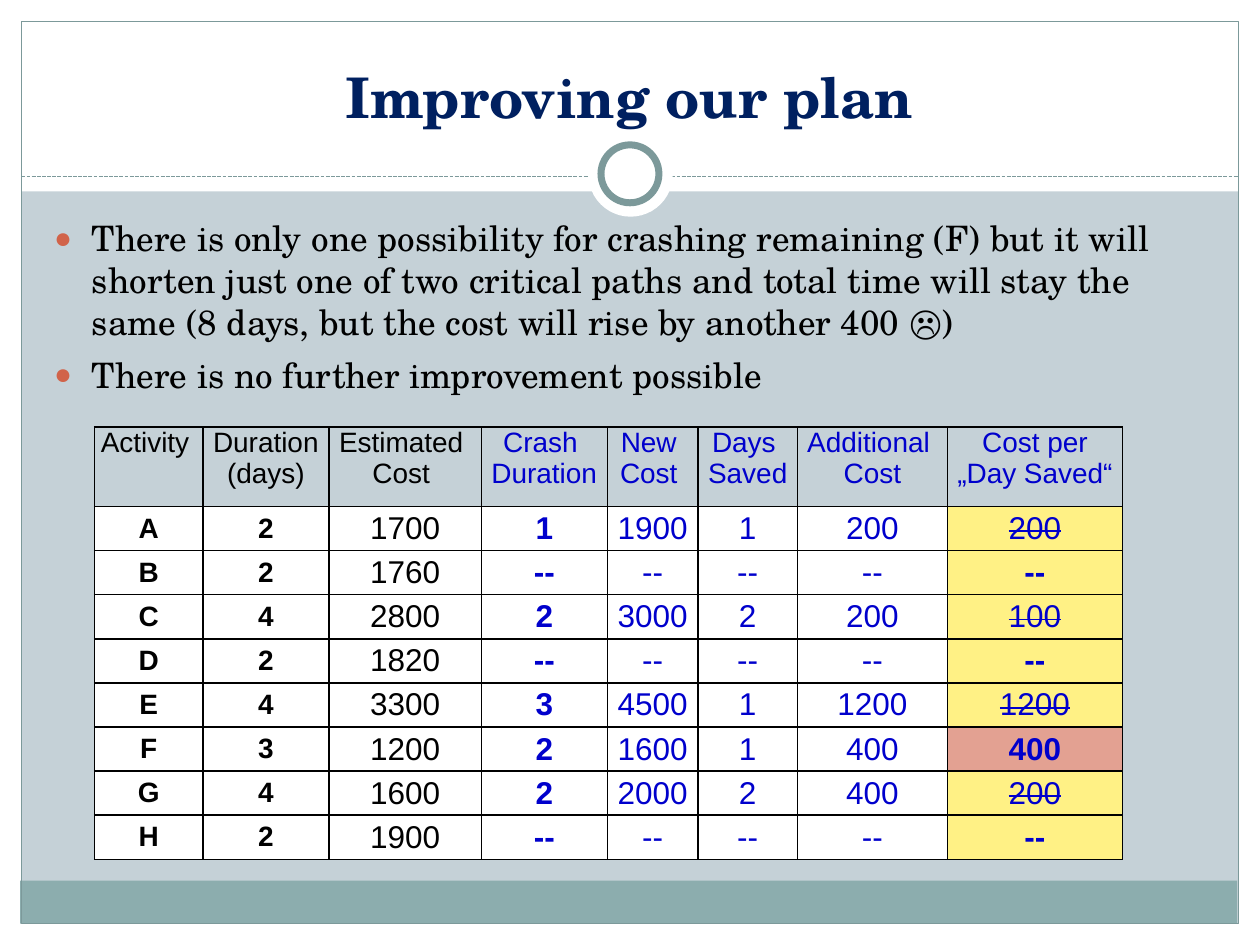
from typing import NamedTuple, Optional

from lxml import etree
from pptx import Presentation
from pptx.dml.color import RGBColor
from pptx.enum.dml import MSO_LINE
from pptx.enum.shapes import MSO_CONNECTOR, MSO_SHAPE
from pptx.enum.text import MSO_ANCHOR, MSO_AUTO_SIZE, PP_ALIGN
from pptx.oxml.ns import qn
from pptx.util import Inches, Pt

RECTANGLE, OVAL = MSO_SHAPE.RECTANGLE, MSO_SHAPE.OVAL
CENTER, LEFT, JUSTIFY = PP_ALIGN.CENTER, PP_ALIGN.LEFT, PP_ALIGN.JUSTIFY
TOP, MIDDLE, BOTTOM = MSO_ANCHOR.TOP, MSO_ANCHOR.MIDDLE, MSO_ANCHOR.BOTTOM

BLACK = RGBColor(0x00, 0x00, 0x00)
WHITE = RGBColor(0xFF, 0xFF, 0xFF)
NAVY = RGBColor(0x00, 0x20, 0x60)
BLUE = RGBColor(0x00, 0x00, 0xCC)
ORANGE = RGBColor(0xD1, 0x63, 0x49)
YELLOW = RGBColor(0xFF, 0xF1, 0x85)
SALMON = RGBColor(0xE3, 0xA1, 0x92)
MIST = RGBColor(0xC5, 0xD1, 0xD7)
TEAL = RGBColor(0x8C, 0xAD, 0xAE)
SLATE = RGBColor(0x7C, 0x99, 0x9A)

SERIF, SANS = "TeX Gyre Schola", "Arial"


class Panel(NamedTuple):
    left: float
    top: float
    width: float
    height: float
    fill: Optional[RGBColor] = None
    line_width: float = 0
    kind: int = RECTANGLE


class Activity(NamedTuple):
    name: str
    duration: str
    cost: str
    crash_duration: str = "--"
    new_cost: str = "--"
    days_saved: str = "--"
    added_cost: str = "--"
    cost_per_day: str = "--"


PANELS = [
    Panel(0, 7.33, 10, 0.17, WHITE),
    Panel(0, 0, 10, 1.52, WHITE),
    Panel(0, 0, 0.17, 7.5, WHITE),
    Panel(9.83, 0, 0.17, 7.5, WHITE),
    Panel(0.16, 6.99, 9.66, 0.34, TEAL),
    Panel(0.17, 0.17, 9.66, 7.16, line_width=0.75),
]
RINGS = [
    Panel(4.67, 1.05, 0.67, 0.67, WHITE, kind=OVAL),
    Panel(4.77, 1.15, 0.46, 0.46, WHITE, 4, OVAL),
]
BULLETS = [
    "There is only one possibility for crashing remaining (F) but it will shorten "
    "just one of two critical paths and total time will stay the same "
    "(8 days, but the cost will rise by another 400 ☹)",
    "There is no further improvement possible",
]
HEADERS = [
    "Activity", "Duration\n(days)", "Estimated \nCost ", "Crash \nDuration",
    "New \nCost ", "Days \nSaved", "Additional \nCost", "Cost per\n„Day Saved“",
]
ACTIVITIES = [
    Activity("A", "2", "1700", "1", "1900", "1", "200", "200"),
    Activity("B", "2", "1760"),
    Activity("C", "4", "2800", "2", "3000", "2", "200", "100"),
    Activity("D", "2", "1820"),
    Activity("E", "4", "3300", "3", "4500", "1", "1200", "1200"),
    Activity("F", "3", "1200", "2", "1600", "1", "400", "400"),
    Activity("G", "4", "1600", "2", "2000", "2", "400", "200"),
    Activity("H", "2", "1900"),
]
COLUMN_WIDTHS = [0.86, 1, 1.21, 1, 0.72, 0.79, 1.19, 1.39]
HEADER_HEIGHT, ROW_HEIGHT = 0.63, 0.35
FIRST_CRASH_COLUMN, LAST_COLUMN = 3, 7
BOLD_COLUMNS = (0, 1, 3)
REMAINING = "F"


def write(frame, text: str, *, font: str, size: float, color: RGBColor,
          bold: bool = False, strike: bool = False, align=CENTER) -> None:
    """Fill a text frame, one paragraph for each line of the text."""
    frame.text = text
    for para in frame.paragraphs:
        para.alignment = align
        for span in para.runs:
            span.font.name = font
            span.font.size = Pt(size)
            span.font.bold = bold
            span.font.color.rgb = color
            if strike:
                span._r.get_or_add_rPr().set("strike", "sngStrike")


def place(shape, left: float, top: float, width: float, height: float) -> None:
    shape.left, shape.top = Inches(left), Inches(top)
    shape.width, shape.height = Inches(width), Inches(height)


def draw_panel(page, panel: Panel) -> None:
    shape = page.shapes.add_shape(panel.kind, *map(Inches, panel[:4]))
    shape.shadow.inherit = False
    if panel.fill is None:
        shape.fill.background()
    else:
        shape.fill.solid()
        shape.fill.fore_color.rgb = panel.fill
    if panel.line_width:
        shape.line.color.rgb = SLATE
        shape.line.width = Pt(panel.line_width)
    else:
        shape.line.fill.background()


def draw_divider(page) -> None:
    line = page.shapes.add_connector(
        MSO_CONNECTOR.STRAIGHT, Inches(0.17), Inches(1.4), Inches(9.83), Inches(1.4))
    line.line.color.rgb = SLATE
    line.line.width = Pt(0.75)
    line.line.dash_style = MSO_LINE.SQUARE_DOT
    properties = line._element.spPr
    properties.find(qn("a:ln")).find(qn("a:prstDash")).set("val", "sysDash")
    etree.SubElement(properties, qn("a:effectLst"))


def add_bullet(para) -> None:
    para.space_before, para.space_after = Pt(0), Pt(6)
    properties = para._p.get_or_add_pPr()
    properties.set("marL", str(Inches(0.3)))
    properties.set("indent", str(Inches(-0.3)))
    tint = etree.SubElement(properties, qn("a:buClr"))
    etree.SubElement(tint, qn("a:srgbClr"), val=str(ORANGE))
    etree.SubElement(properties, qn("a:buSzPct"), val="85000")
    etree.SubElement(properties, qn("a:buChar"), char="●")


def add_borders(cell) -> None:
    properties = cell._tc.get_or_add_tcPr()
    for side in ("lnL", "lnR", "lnT", "lnB"):
        line = etree.SubElement(properties, qn(f"a:{side}"), w=str(Pt(1)))
        paint = etree.SubElement(line, qn("a:solidFill"))
        etree.SubElement(paint, qn("a:srgbClr"), val=str(BLACK))


def format_cell(cell, anchor, fill: Optional[RGBColor] = None) -> None:
    cell.margin_left = cell.margin_right = Inches(0.05)
    cell.margin_top = cell.margin_bottom = 0
    cell.vertical_anchor = anchor
    add_borders(cell)
    if fill is None:
        cell.fill.background()
    else:
        cell.fill.solid()
        cell.fill.fore_color.rgb = fill


def fill_activity_cell(cell, activity: Activity, column: int) -> None:
    text, fill, strike = activity[column], WHITE, False
    bold = column in BOLD_COLUMNS
    if column == LAST_COLUMN:
        fill = SALMON if activity.name == REMAINING else YELLOW
        strike = text != "--" and activity.name != REMAINING
        bold = not strike
    format_cell(cell, MIDDLE, fill)
    write(cell.text_frame, text, font=SANS, size=16 if column < 2 else 18,
          color=BLUE if column >= FIRST_CRASH_COLUMN else BLACK, bold=bold, strike=strike)


def add_cost_table(page) -> None:
    height = HEADER_HEIGHT + ROW_HEIGHT * len(ACTIVITIES)
    table = page.shapes.add_table(
        len(ACTIVITIES) + 1, len(HEADERS), Inches(0.75), Inches(3.39),
        Inches(sum(COLUMN_WIDTHS)), Inches(height)).table
    table.first_row = table.horz_banding = False
    for index, row in enumerate(table.rows):
        row.height = Inches(ROW_HEIGHT if index else HEADER_HEIGHT)
    for column, (header, width) in enumerate(zip(HEADERS, COLUMN_WIDTHS)):
        table.columns[column].width = Inches(width)
        cell = table.cell(0, column)
        format_cell(cell, TOP)
        write(cell.text_frame, header, font=SANS, size=16,
              color=BLUE if column >= FIRST_CRASH_COLUMN else BLACK,
              align=CENTER if column else JUSTIFY)
        for row_index, activity in enumerate(ACTIVITIES, start=1):
            fill_activity_cell(table.cell(row_index, column), activity, column)


def main() -> None:
    deck = Presentation()
    deck.slide_width, deck.slide_height = Inches(10), Inches(7.5)
    page = deck.slides.add_slide(deck.slide_layouts[1])
    page.background.fill.solid()
    page.background.fill.fore_color.rgb = MIST

    for panel in PANELS:
        draw_panel(page, panel)
    draw_divider(page)
    for ring in RINGS:
        draw_panel(page, ring)

    title, body = page.shapes.title, page.placeholders[1]
    place(title, 0.33, 0.25, 9.33, 0.83)
    place(body, 0.33, 1.67, 9, 5)
    for box, anchor in ((title, BOTTOM), (body, TOP)):
        page.shapes._spTree.append(box._element)  # bring in front of the panels
        box.text_frame.auto_size = MSO_AUTO_SIZE.NONE
        box.text_frame.vertical_anchor = anchor
    write(title.text_frame, "Improving our plan", font=SERIF, size=32, color=NAVY, bold=True)
    write(body.text_frame, "\n".join(BULLETS), font=SERIF, size=20, color=BLACK, align=LEFT)
    for para in body.text_frame.paragraphs:
        add_bullet(para)

    add_cost_table(page)
    deck.save("out.pptx")


if __name__ == "__main__":
    main()
